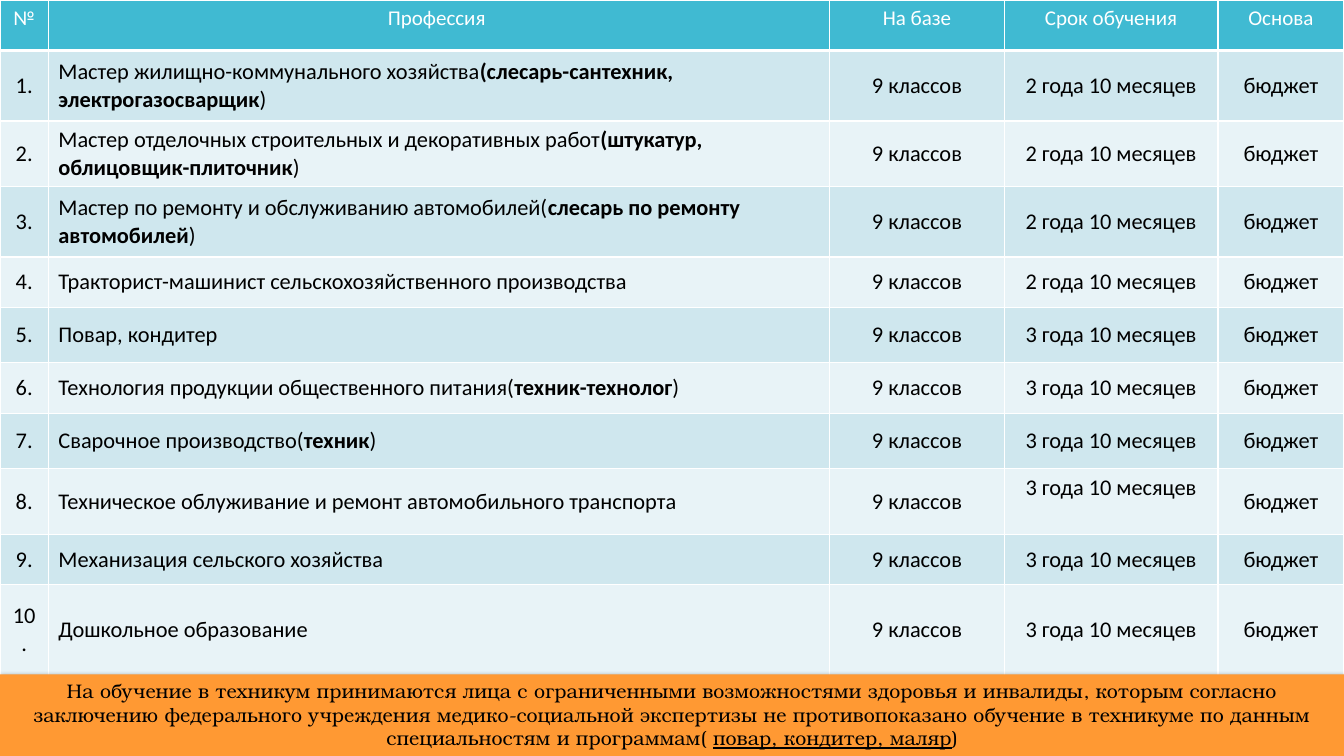
from lxml.etree import SubElement
from pptx import Presentation
from pptx.dml.color import RGBColor
from pptx.enum.shapes import MSO_SHAPE as Preset
from pptx.enum.text import MSO_ANCHOR as Anchor, PP_ALIGN as Align
from pptx.oxml.ns import qn
from pptx.util import Inches, Pt

HEADINGS = ["№", "Профессия ", "На базе", "Срок обучения", "Основа"]
COLUMN_WIDTHS = [0.48, 7.75, 1.73, 2.12, 1.25]
HEADING_HEIGHT = 0.5
SCHOOL_BASE, FUNDING = "9 классов", "бюджет"
SHORT_TERM, LONG_TERM = "2 года 10 месяцев", "3 года 10 месяцев"
# Row height, profession (bold between asterisks), term
PROFESSIONS = [
    (0.7, "Мастер жилищно-коммунального хозяйства*(слесарь-сантехник, "
          "электрогазосварщик*)", SHORT_TERM),
    (0.65, "Мастер отделочных строительных и декоративных работ*(штукатур, "
           "облицовщик-плиточник*)", SHORT_TERM),
    (0.7, "Мастер по ремонту и обслуживанию автомобилей(*cлесарь по ремонту "
          "автомобилей*)", SHORT_TERM),
    (0.5, "Тракторист-машинист сельскохозяйственного производства", SHORT_TERM),
    (0.55, "Повар, кондитер", LONG_TERM),
    (0.5, "Технология продукции общественного питания(*техник-технолог*)", LONG_TERM),
    (0.55, "Сварочное производство(*техник*)", LONG_TERM),
    (0.65, "Техническое облуживание и ремонт автомобильного транспорта", LONG_TERM),
    (0.5, "Механизация сельского хозяйства", LONG_TERM),
    (0.9, "Дошкольное образование", LONG_TERM),
]
RAISED_TERM_ROW = 8
ADMISSION_NOTE = (
    "На обучение в техникум принимаются лица с ограниченными возможностями здоровья "
    "и инвалиды, которым согласно заключению федерального учреждения "
    "медико-социальной экспертизы не противопоказано обучение в техникуме по данным "
    "специальностям и программам( *повар, кондитер, маляр*)"
)


def rgb(color):
    return RGBColor.from_string(color)


def write(frame, text, size=16, font="Calibri", color="000000",
          align=Align.CENTER, emphasis="bold"):
    """Fill a text frame, applying the emphasis between asterisks."""
    frame.word_wrap = True
    paragraph = frame.paragraphs[0]
    paragraph.alignment = align
    for index, part in enumerate(text.split("*")):
        run = paragraph.add_run()
        run.text = part
        run.font.size, run.font.name = Pt(size), font
        run.font.color.rgb = rgb(color)
        run.font.bold = False
        if index % 2:
            setattr(run.font, emphasis, True)


class Slide:
    header_fill, band_fills = "40BAD2", ["CFE7EE", "E8F3F7"]
    white, note_fill = "FFFFFF", "FF9933"
    note_font = "TeX Gyre Bonum"

    def __init__(self, deck):
        self.shapes = deck.slides.add_slide(deck.slide_layouts[6]).shapes

    def table(self, rows, heights, widths):
        grid = self.shapes.add_table(len(rows), len(widths), 0, 0,
                                     Inches(sum(widths)), Inches(sum(heights))).table
        grid.first_row = grid.horz_banding = False
        for column, width in zip(grid.columns, widths):
            column.width = Inches(width)
        for number, (row, height, texts) in enumerate(zip(grid.rows, heights, rows)):
            row.height = Inches(height)
            for column, (cell, text) in enumerate(zip(row.cells, texts)):
                if number == 0:
                    self.cell(cell, text, self.header_fill, Anchor.TOP,
                              bottom=3, size=15, color=self.white)
                    continue
                raised = number == RAISED_TERM_ROW and column == 3
                self.cell(cell, text, self.band_fills[(number - 1) % 2],
                          Anchor.TOP if raised else Anchor.MIDDLE,
                          align=Align.LEFT if column == 1 else Align.CENTER)

    def cell(self, cell, text, fill, anchor, bottom=1, **text_format):
        cell.vertical_anchor = anchor
        properties = cell._tc.get_or_add_tcPr()
        for side, points in zip("LRTB", (1, 1, 1, bottom)):
            line = SubElement(properties, qn(f"a:ln{side}"), w=str(Pt(points)))
            SubElement(SubElement(line, qn("a:solidFill")), qn("a:srgbClr"), val=self.white)
        cell.fill.solid()
        cell.fill.fore_color.rgb = rgb(fill)
        write(cell.text_frame, text, **text_format)

    def note(self, text, left, top, width, height):
        box = self.shapes.add_shape(Preset.RECTANGLE, Inches(left), Inches(top),
                                    Inches(width), Inches(height))
        box.fill.solid()
        box.fill.fore_color.rgb = rgb(self.note_fill)
        box.line.fill.background()
        self.shadow(box)
        box.text_frame.vertical_anchor = Anchor.TOP
        write(box.text_frame, text, size=14, font=self.note_font, emphasis="underline")

    def shadow(self, shape):
        shape.shadow.inherit = False
        effects = shape._element.spPr.find(qn("a:effectLst"))
        outer = SubElement(effects, qn("a:outerShdw"), blurRad=str(Pt(3.5)),
                           dist=str(Pt(1.1)), dir="5400000", rotWithShape="0")
        tint = SubElement(outer, qn("a:srgbClr"), val="000000")
        SubElement(tint, qn("a:alpha"), val="45000")


def main():
    deck = Presentation()
    deck.slide_width, deck.slide_height = Inches(13.33), Inches(7.5)
    slide = Slide(deck)
    rows = [HEADINGS] + [
        [f"{number}.", profession, SCHOOL_BASE, term, FUNDING]
        for number, (_, profession, term) in enumerate(PROFESSIONS, 1)
    ]
    heights = [HEADING_HEIGHT] + [height for height, _, _ in PROFESSIONS]
    slide.table(rows, heights, COLUMN_WIDTHS)
    slide.note(ADMISSION_NOTE, 0, 6.69, 13.33, 0.81)
    deck.save("out.pptx")


if __name__ == "__main__":
    main()
